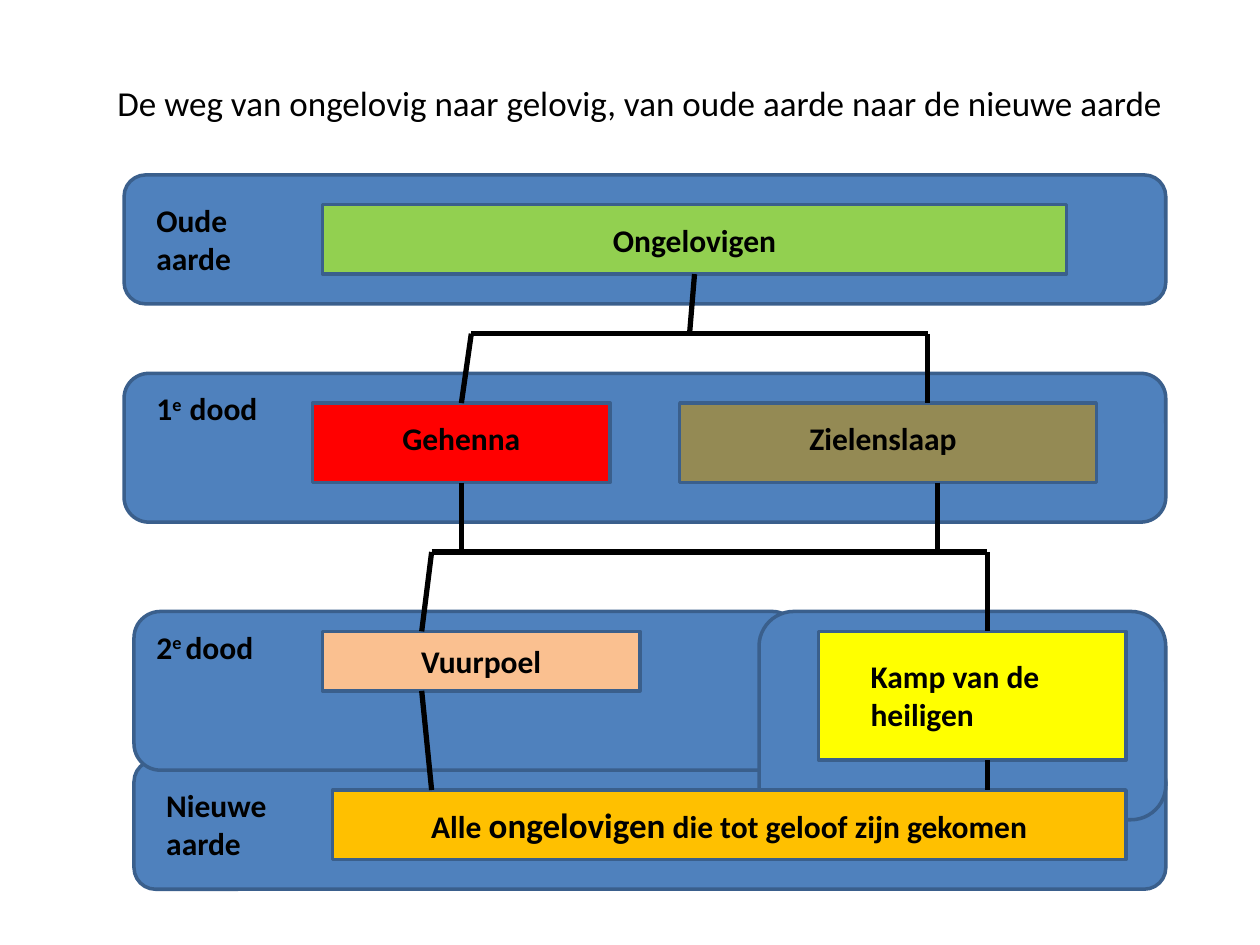
from dataclasses import dataclass
from lxml.etree import SubElement
from pptx import Presentation
from pptx.dml.color import RGBColor
from pptx.enum.shapes import MSO_CONNECTOR, MSO_SHAPE
from pptx.enum.text import MSO_ANCHOR, PP_ALIGN
from pptx.oxml.ns import qn
from pptx.util import Inches, Pt


@dataclass(frozen=True)
class Theme:
    font: str = "Calibri"
    body: int = 18
    head: int = 20
    edge: int = 2
    link: int = 3
    ink: str = "000000"
    panel: str = "4F81BD"
    rim: str = "3A5F8C"
    green: str = "92D050"
    red: str = "FF0000"
    olive: str = "948A54"
    peach: str = "FAC090"
    yellow: str = "FFFF00"
    gold: str = "FFC000"


@dataclass(frozen=True)
class Box:
    x: float
    y: float
    w: float
    h: float

    def inner(self, x, y, w, h):
        return Box(self.x + x, self.y + y, w, h)


THEME = Theme()
WIDE, HIGH = 10, 7.5
STEP = WIDE / 127
LEFT, TOP = 0.04, 0.05


def across(col):
    return Inches(LEFT + col * STEP)


def down(row):
    return Inches(TOP + row * STEP)


def place(box):
    return across(box.x), down(box.y), Inches(box.w * STEP), Inches(box.h * STEP)


def write(frame, text, size=THEME.body, bold=True, align=PP_ALIGN.LEFT, anchor=MSO_ANCHOR.TOP):
    frame.word_wrap = True
    frame.vertical_anchor = anchor
    lines = [[(line, {})] for line in text.split("\n")] if isinstance(text, str) else [text]
    for row, line in enumerate(lines):
        para = frame.paragraphs[0] if row == 0 else frame.add_paragraph()
        para.alignment = align
        for words, extra in line:
            run = para.add_run()
            run.text = words
            run.font.name = THEME.font
            run.font.size = Pt(extra.get("size", size))
            run.font.bold = bold
            run.font.color.rgb = RGBColor.from_string(THEME.ink)
            if "lift" in extra:
                run._r.get_or_add_rPr().set("baseline", str(extra["lift"] * 1000))


def label(slide, box, text, **look):
    write(slide.shapes.add_textbox(*place(box)).text_frame, text, **look)


def block(slide, box, fill, text=None, kind=MSO_SHAPE.RECTANGLE):
    shape = slide.shapes.add_shape(kind, *place(box))
    shape.shadow.inherit = False
    shape.fill.solid()
    shape.fill.fore_color.rgb = RGBColor.from_string(fill)
    shape.line.color.rgb = RGBColor.from_string(THEME.rim)
    shape.line.width = Pt(THEME.edge)
    if text:
        write(shape.text_frame, text, align=PP_ALIGN.CENTER, anchor=MSO_ANCHOR.MIDDLE)


def panel(slide, box):
    block(slide, box, THEME.panel, kind=MSO_SHAPE.ROUNDED_RECTANGLE)


def join(slide, start, end):
    line = slide.shapes.add_connector(
        MSO_CONNECTOR.STRAIGHT, across(start[0]), down(start[1]), across(end[0]), down(end[1]))
    line.line.color.rgb = RGBColor.from_string(THEME.ink)
    line.line.width = Pt(THEME.link)
    SubElement(line._element.spPr, qn("a:effectLst"))


def title(slide, box):
    label(slide, box, "De weg van ongelovig naar gelovig, van oude aarde naar de nieuwe aarde",
          size=THEME.head, bold=False, align=PP_ALIGN.CENTER)


def old_earth(slide, box):
    panel(slide, box)
    block(slide, box.inner(20, 3, 75, 7), THEME.green, "Ongelovigen")
    label(slide, box.inner(2, 2, 15, 9), "Oude\naarde")


def first_death(slide, box):
    panel(slide, box)
    label(slide, box.inner(2, 1, 14, 5), [("1", {}), ("e  ", {"lift": 30}), ("dood", {})])
    block(slide, box.inner(19, 3, 30, 8), THEME.red)
    label(slide, box.inner(21, 4, 26, 5), "Gehenna", align=PP_ALIGN.CENTER)
    block(slide, box.inner(56, 3, 42, 8), THEME.olive)
    label(slide, box.inner(59, 4, 35, 5), "Zielenslaap", align=PP_ALIGN.CENTER)


def second_death(slide, box):
    panel(slide, box)
    label(slide, box.inner(1, 1, 18, 5), [("2", {}), ("e ", {"lift": 30}), ("dood", {})])
    block(slide, box.inner(19, 2, 32, 6), THEME.peach, "Vuurpoel")


def camp(slide, box):
    panel(slide, box)
    block(slide, box.inner(6, 2, 31, 13), THEME.yellow)
    label(slide, box.inner(10, 4, 22, 9), "Kamp van de heiligen")


def new_earth(slide, box):
    block(slide, box.inner(20, 3, 80, 7), THEME.gold, [
        ("Alle ", {}), ("ongelovigen", {"size": THEME.head}), (" die tot geloof zijn gekomen", {})])
    label(slide, box.inner(2, 2, 15, 9), "Nieuwe\naarde")


def links(slide, box):
    for start, end in [
        ((27.5, 0), (27, 6)), ((5, 6), (51, 6)), ((5, 6), (4, 13)), ((51, 6), (51, 13)),
        ((4, 21), (4, 28)), ((52, 21), (52, 28)), ((1, 28), (57, 28)),
        ((1, 28), (0, 36)), ((57, 28), (57, 36)), ((0, 42), (1, 52)), ((57, 49), (57, 52)),
    ]:
        join(slide, (box.x + start[0], box.y + start[1]), (box.x + end[0], box.y + end[1]))


def main():
    deck = Presentation()
    deck.slide_width, deck.slide_height = Inches(WIDE), Inches(HIGH)
    slide = deck.slides.add_slide(deck.slide_layouts[6])
    ground = Box(13, 76, 104, 13)
    title(slide, Box(5, 7, 118, 5.6))
    old_earth(slide, Box(12, 17, 105, 13))
    panel(slide, ground)
    first_death(slide, Box(12, 37, 105, 15))
    second_death(slide, Box(13, 61, 67, 16))
    camp(slide, Box(76, 61, 41, 21))
    new_earth(slide, ground)
    links(slide, Box(42, 27, 57, 52))
    deck.save("out.pptx")


if __name__ == "__main__":
    main()
